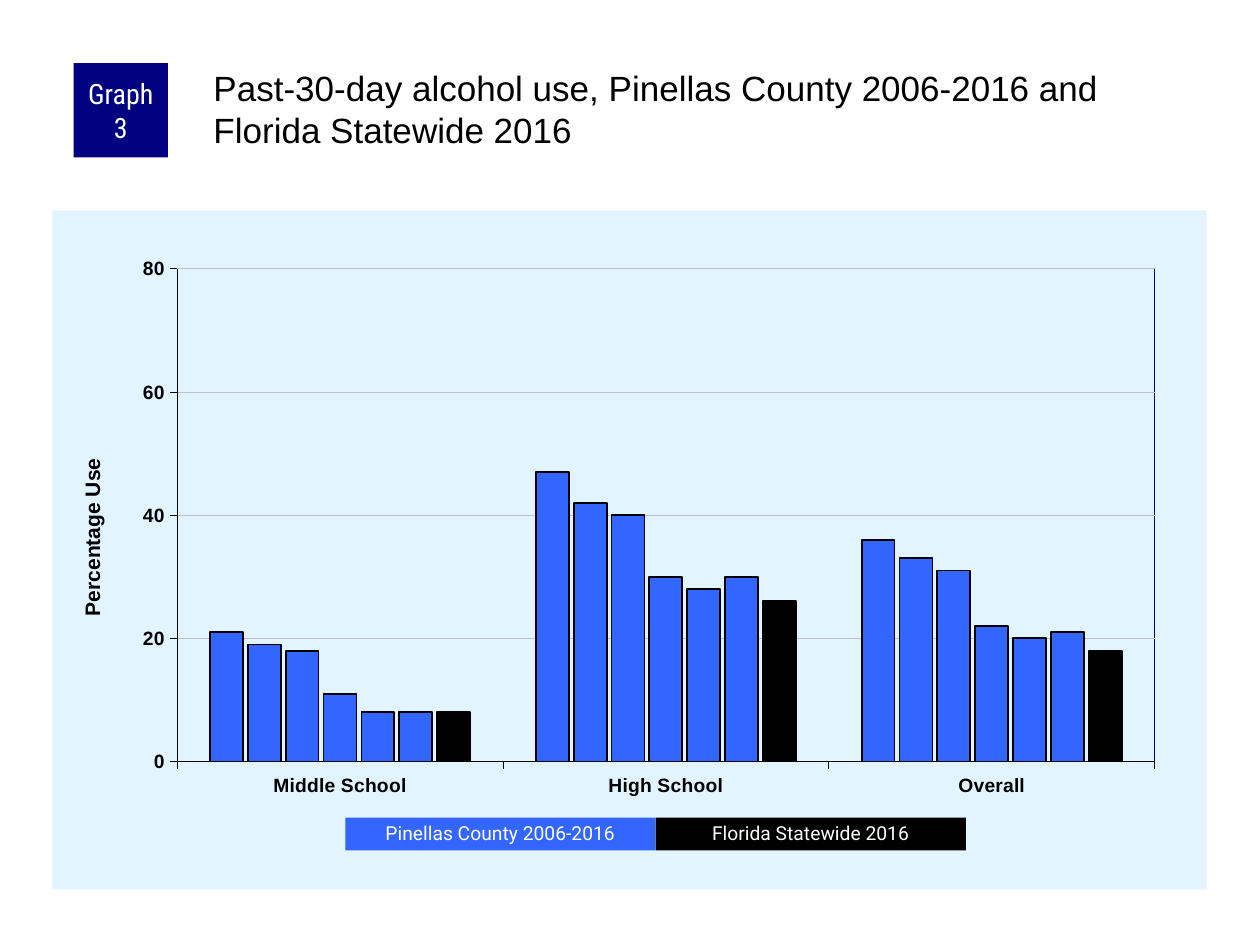
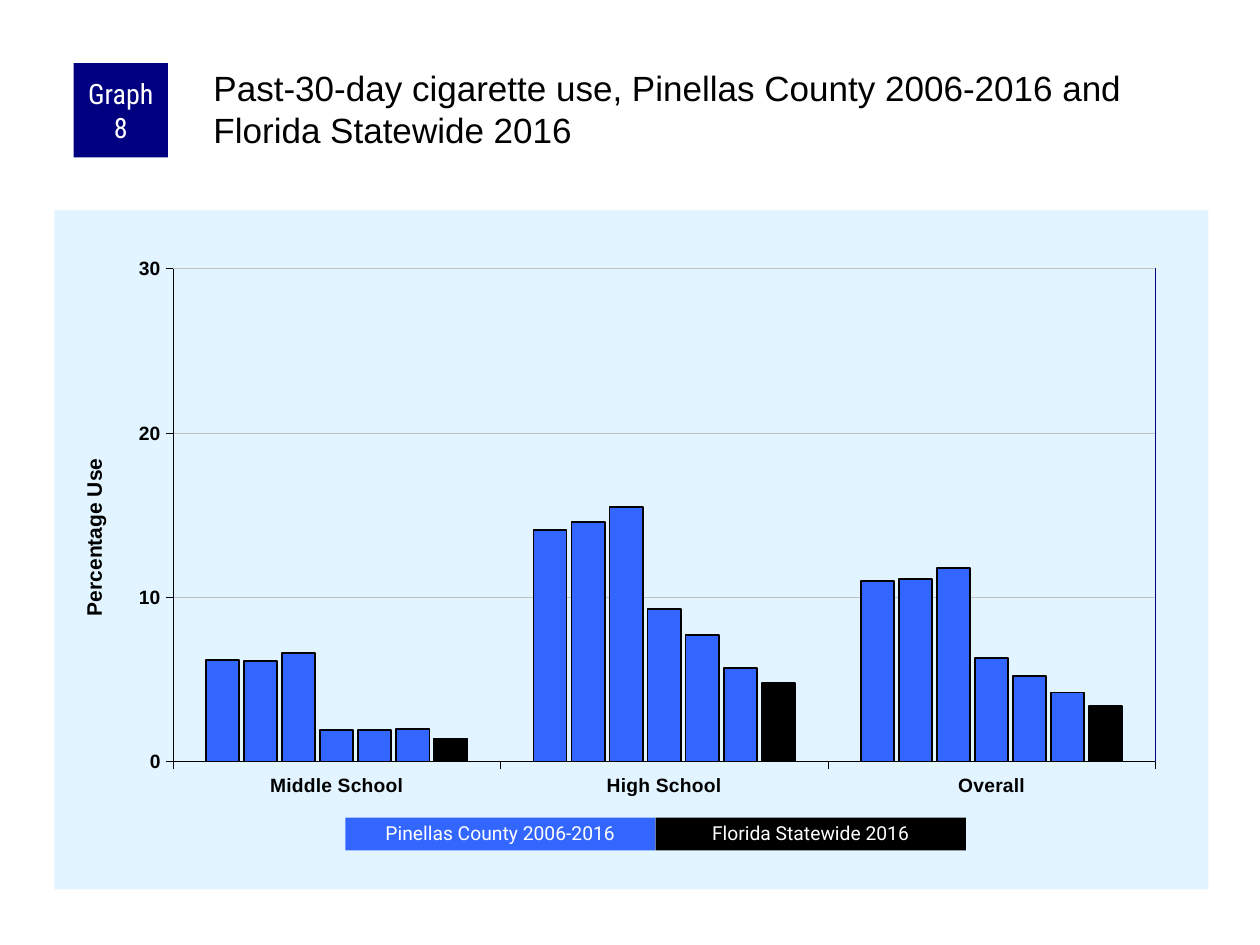
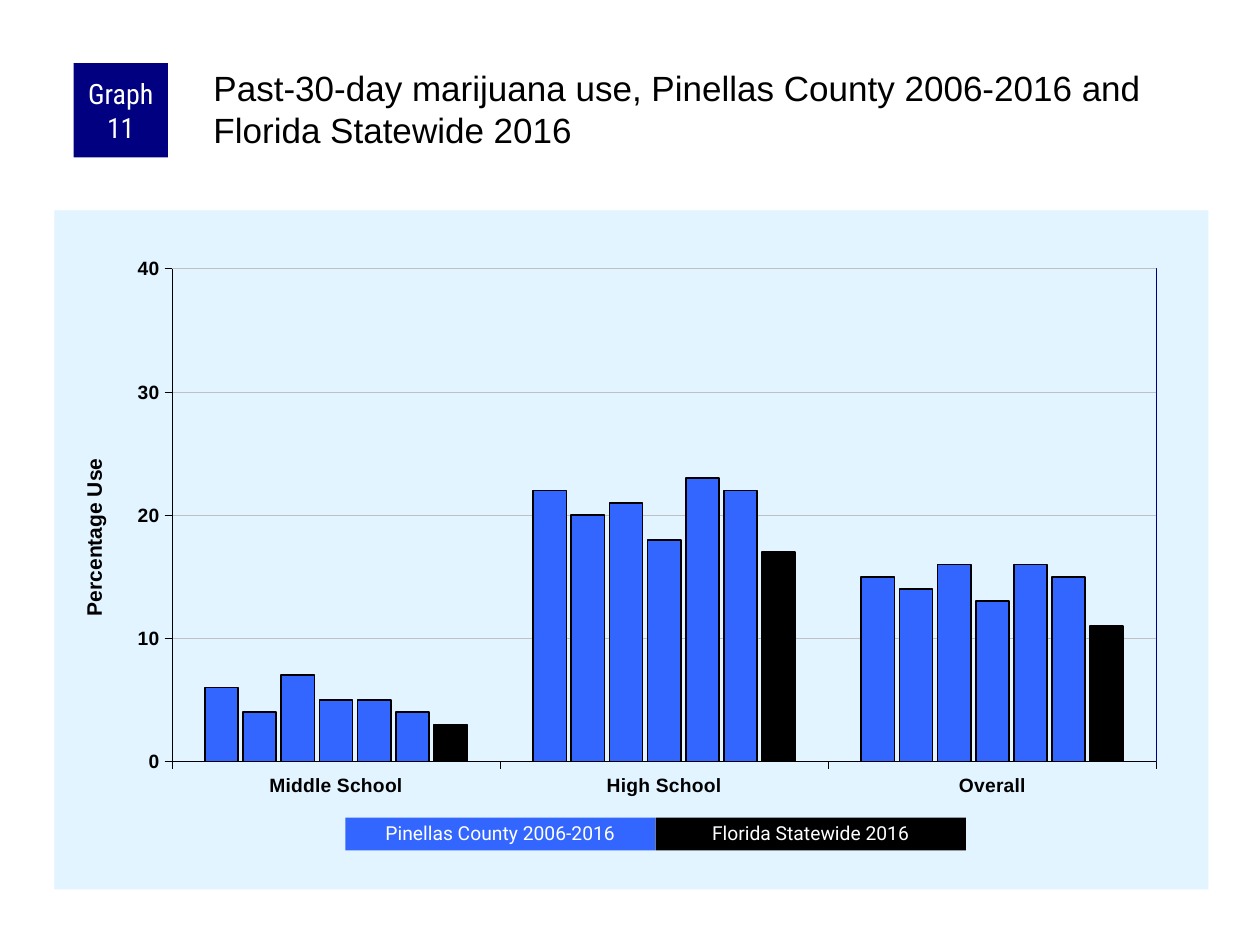
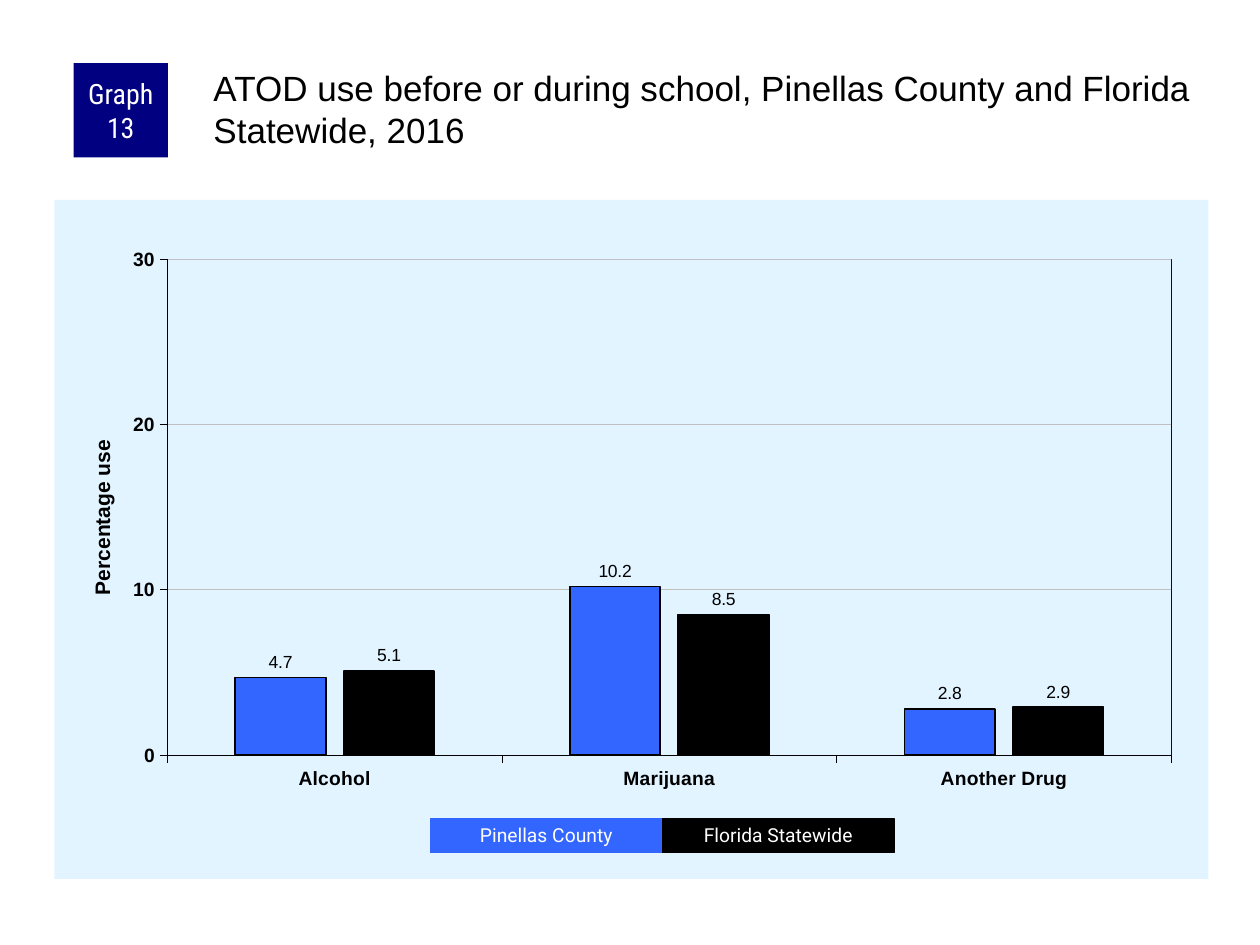
from dataclasses import dataclass

from pptx import Presentation
from pptx.chart.data import CategoryChartData
from pptx.dml.color import RGBColor
from pptx.enum.chart import XL_CHART_TYPE, XL_LABEL_POSITION, XL_TICK_MARK
from pptx.enum.shapes import MSO_SHAPE
from pptx.enum.text import MSO_ANCHOR, PP_ALIGN
from pptx.oxml import parse_xml
from pptx.oxml.ns import nsdecls
from pptx.util import Pt

COLORS = {
    "ink": "000000",
    "paper": "FFFFFF",
    "navy": "000080",
    "county": "3366FF",
    "state": "000000",
    "panel": "E1F4FF",
    "grid": "C0C0C0",
}
FONT, BADGE_FONT, KEY_FONT = "Arial", "Roboto Condensed", "Roboto"
HAIR = 0.25


@dataclass(frozen=True)
class Box:
    left: float
    top: float
    width: float
    height: float


@dataclass(frozen=True)
class Key:
    """Two equal legend boxes side by side; box is the first of them."""
    box: Box
    labels: tuple[str, str]
    edge: float = 0


@dataclass(frozen=True)
class Graph:
    number: int
    title: str
    rows: list[tuple[float, ...]]
    top: float
    step: float
    plot: tuple[float, float, float, float]
    box: Box = Box(31, 120.2, 659.5, 388)
    cats: tuple[str, ...] = ("Middle School", "High School", "Overall")
    axis: str = "Percentage Use"
    spot: tuple[float, float] = (0.02, 0.36)
    size: float = 8
    gap: int = 200
    lap: int = -15
    values: bool = False
    key: Key = Key(Box(197.3, 467.3, 177.3, 18.7),
                   ("Pinellas County 2006-2016", "Florida Statewide 2016"))


BADGE = Box(42, 36, 54, 54)
HEADING = Box(120, 36, 570, 60)
TREND = "Past-30-day {} use, Pinellas County 2006-2016 and Florida Statewide 2016"

GRAPHS = [
    Graph(3, TREND.format("alcohol"),
          [(21, 47, 36), (19, 42, 33), (18, 40, 31), (11, 30, 22),
           (8, 28, 20), (8, 30, 21), (8, 26, 18)],
          top=80, step=20, plot=(0.108, 0.086, 0.847, 0.726),
          box=Box(30, 120.2, 659.5, 388)),
    Graph(8, TREND.format("cigarette"),
          [(6.2, 14.1, 11), (6.1, 14.6, 11.1), (6.6, 15.5, 11.8), (1.9, 9.3, 6.3),
           (1.9, 7.7, 5.2), (2, 5.7, 4.2), (1.4, 4.8, 3.4)],
          top=30, step=10, plot=(0.103, 0.086, 0.851, 0.726)),
    Graph(11, TREND.format("marijuana"),
          [(6, 22, 15), (4, 20, 14), (7, 21, 16), (5, 18, 13),
           (5, 23, 16), (4, 22, 15), (3, 17, 11)],
          top=40, step=10, plot=(0.102, 0.086, 0.853, 0.726)),
    Graph(13, "ATOD use before or during school, Pinellas County and Florida Statewide, 2016",
          [(4.7, 10.2, 2.8), (5.1, 8.5, 2.9)],
          top=30, step=10, plot=(0.098, 0.087, 0.87, 0.731),
          box=Box(31, 114.2, 659.5, 388),
          cats=("Alcohol", "Marijuana", "Another Drug"),
          axis="Percentage use", spot=(0.027, 0.348),
          size=11.5, gap=150, lap=-20, values=True,
          key=Key(Box(246, 468, 132.5, 19.4),
                  ("Pinellas County", "Florida Statewide"), edge=0.75)),
]


def rgb(name: str) -> RGBColor:
    return RGBColor.from_string(COLORS[name])


def place(box: Box) -> tuple[Pt, ...]:
    return Pt(box.left), Pt(box.top), Pt(box.width), Pt(box.height)


def style(font, size: float, color: str = "ink", face: str = FONT, bold: bool = False) -> None:
    font.size, font.name, font.bold = Pt(size), face, bold
    font.color.rgb = rgb(color)


def write(frame, text: str, *, size: float, color: str = "ink", face: str = FONT,
          bold: bool = False, align=None, space: float | None = None) -> None:
    line = frame.paragraphs[0]
    line.alignment, line.line_spacing = align, space
    run = line.add_run()
    run.text = text
    style(run.font, size, color, face, bold)


def inset(frame, left: float, top: float, right: float, bottom: float) -> None:
    frame.margin_left, frame.margin_top = Pt(left), Pt(top)
    frame.margin_right, frame.margin_bottom = Pt(right), Pt(bottom)


def stroke(line, color: str, width: float) -> None:
    line.color.rgb = rgb(color)
    line.width = Pt(width)


def add_block(slide, box: Box, fill: str, edge: float = 0):
    """Add a filled rectangle and return its text frame."""
    shape = slide.shapes.add_shape(MSO_SHAPE.RECTANGLE, *place(box))
    shape.shadow.inherit = False
    shape.fill.solid()
    shape.fill.fore_color.rgb = rgb(fill)
    if edge:
        stroke(shape.line, fill, edge)
    else:
        shape.line.fill.background()
    frame = shape.text_frame
    frame.word_wrap = True
    frame.vertical_anchor = MSO_ANCHOR.MIDDLE
    return frame


def set_layout(node, index: int, inner: bool, **parts: float) -> None:
    """Give a chart part a manual layout, as fractions of the chart."""
    for old in node.xpath("c:layout"):
        node.remove(old)
    target = '<c:layoutTarget val="inner"/>' if inner else ""
    modes = '<c:xMode val="edge"/><c:yMode val="edge"/>'
    sizes = "".join(f'<c:{name} val="{part}"/>' for name, part in parts.items())
    node.insert(index, parse_xml(
        f'<c:layout {nsdecls("c")}><c:manualLayout>{target}{modes}{sizes}'
        "</c:manualLayout></c:layout>"))


def shape_props(fill: str, line: str):
    return parse_xml(f'<c:spPr {nsdecls("c", "a")}>{fill}{line}</c:spPr>')


def solid(color: str) -> str:
    return f'<a:solidFill><a:srgbClr val="{COLORS[color]}"/></a:solidFill>'


def style_axes(chart, graph: Graph) -> None:
    for axis in (chart.category_axis, chart.value_axis):
        axis.major_tick_mark = XL_TICK_MARK.OUTSIDE
        axis.minor_tick_mark = XL_TICK_MARK.NONE
        style(axis.tick_labels.font, 11, bold=True)
        stroke(axis.format.line, "ink", HAIR)
    axis = chart.value_axis
    axis.minimum_scale, axis.maximum_scale, axis.major_unit = 0, graph.top, graph.step
    stroke(axis.major_gridlines.format.line, "grid", HAIR)
    title = axis.axis_title
    write(title.text_frame, graph.axis, size=12, bold=True)
    title.element.xpath(".//a:bodyPr")[0].set("rot", "-5400000")
    left, top = graph.spot
    set_layout(title.element, 1, False, x=left, y=top)


def style_bars(plot, graph: Graph) -> None:
    plot.gap_width, plot.overlap, plot.vary_by_categories = graph.gap, graph.lap, False
    last = len(graph.rows) - 1
    for index, bars in enumerate(plot.series):
        bars.format.fill.solid()
        bars.format.fill.fore_color.rgb = rgb("state" if index == last else "county")
        stroke(bars.format.line, "ink", 1)
        if graph.values:
            labels = bars.data_labels
            labels.show_value = True
            labels.number_format, labels.number_format_is_linked = "0.0", False
            labels.position = XL_LABEL_POSITION.OUTSIDE_END
            style(labels.font, 10)


def add_graph(slide, graph: Graph) -> None:
    data = CategoryChartData()
    data.categories = graph.cats
    for count, row in enumerate(graph.rows, 1):
        data.add_series(f"Series {count}", row)
    chart = slide.shapes.add_chart(
        XL_CHART_TYPE.COLUMN_CLUSTERED, *place(graph.box), data).chart
    chart.has_title = chart.has_legend = False
    style(chart.font, graph.size)
    style_axes(chart, graph)
    style_bars(chart.plots[0], graph)

    area = chart.element.xpath("c:chart/c:plotArea")[0]
    set_layout(area, 0, True, **dict(zip("xywh", graph.plot)))
    border = f'<a:ln w="{Pt(HAIR)}">{solid("navy")}</a:ln>'
    area.append(shape_props("<a:noFill/>", border))
    panel = shape_props(solid("panel"), "<a:ln><a:noFill/></a:ln>")
    chart.element.xpath("c:chart")[0].addnext(panel)


def add_badge(slide, number: int) -> None:
    frame = add_block(slide, BADGE, "navy")
    inset(frame, 3.6, 0, 3.6, 0)
    write(frame, f"Graph {number}", size=16, color="paper", face=BADGE_FONT,
          align=PP_ALIGN.CENTER)


def add_heading(slide, text: str) -> None:
    frame = slide.shapes.add_textbox(*place(HEADING)).text_frame
    frame.word_wrap = True
    inset(frame, 2, 2, 0, 0)
    write(frame, text, size=20)


def add_key(slide, key: Key) -> None:
    first = key.box
    for index, (label, fill) in enumerate(zip(key.labels, ("county", "state"))):
        box = Box(first.left + index * first.width, first.top, first.width, first.height)
        write(add_block(slide, box, fill, key.edge), label, size=11, color="paper",
              face=KEY_FONT, align=PP_ALIGN.CENTER, space=0.9)


def main() -> None:
    deck = Presentation()
    deck.slide_width, deck.slide_height = Pt(720), Pt(540)
    blank = deck.slide_layouts[6]
    for graph in GRAPHS:
        slide = deck.slides.add_slide(blank)
        add_graph(slide, graph)
        add_badge(slide, graph.number)
        add_heading(slide, graph.title)
        add_key(slide, graph.key)
    deck.save("out.pptx")


if __name__ == "__main__":
    main()
